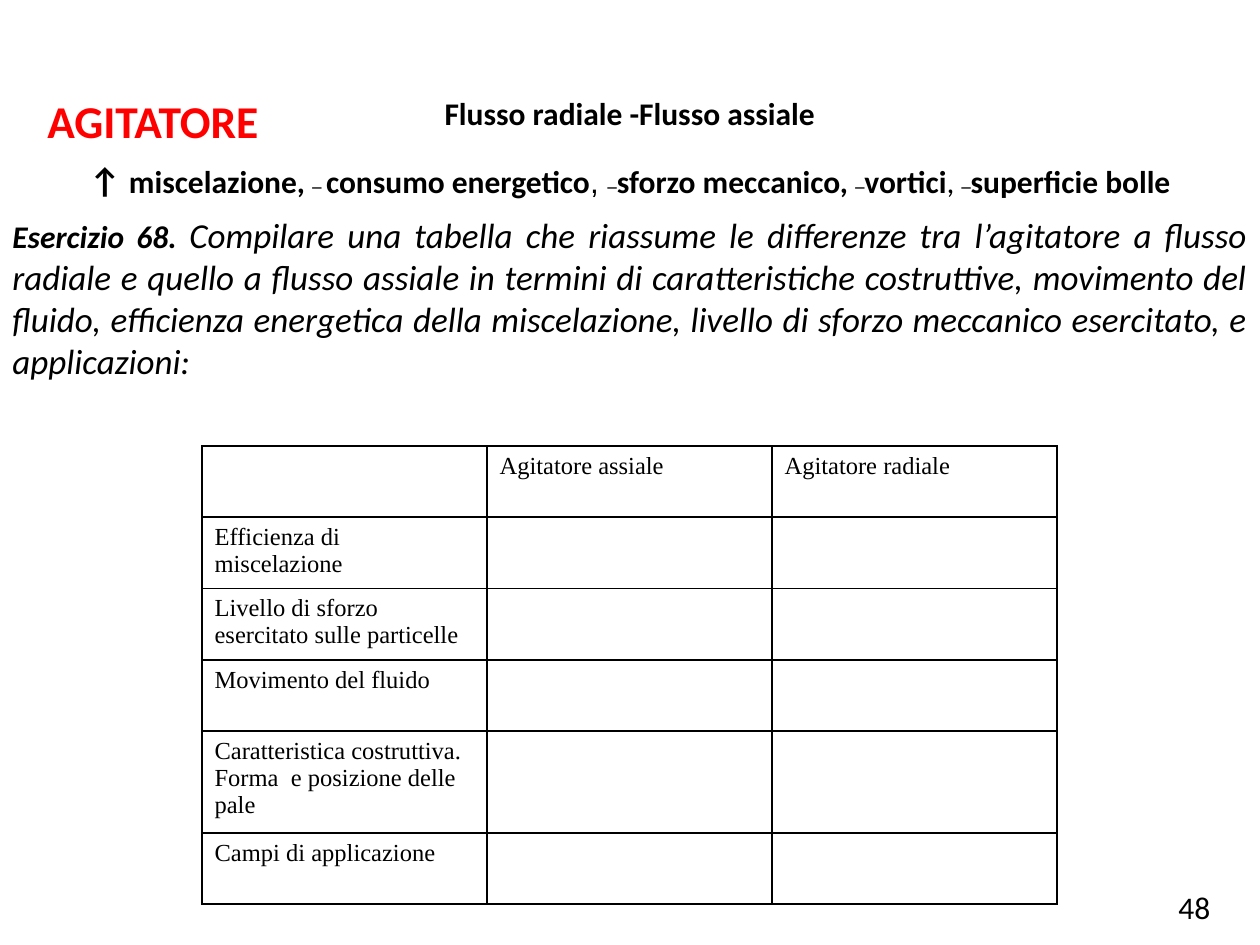
from lxml.etree import SubElement
from pptx import Presentation
from pptx.dml.color import RGBColor
from pptx.enum.text import MSO_ANCHOR, PP_ALIGN
from pptx.oxml.ns import qn
from pptx.util import Pt

EMU_PER_PX = 914400 / 126
BLACK = RGBColor(0x00, 0x00, 0x00)
RED = RGBColor(0xFF, 0x00, 0x00)
WHITE = RGBColor(0xFF, 0xFF, 0xFF)
SERIF = "Times New Roman"

BAR = ("¯", dict(font=SERIF, bold=True, baseline=-25))
BAR_SPACED = ("¯ ", BAR[1])
BOLD = dict(bold=True)
EFFECTS = [
    ("↑ ", dict(size=20, bold=True)),
    ("miscelazione, ", BOLD), BAR_SPACED,
    ("consumo energetico", BOLD), (", ", dict(font="Arial")), BAR,
    ("sforzo meccanico, ", BOLD), BAR,
    ("vortici", BOLD), (", ", {}), BAR,
    ("superficie bolle", BOLD),
]
EXERCISE = [
    ("Esercizio 68. ", dict(bold=True, italic=True)),
    ("Compilare una tabella che riassume le differenze tra l’agitatore a flusso "
     "radiale e quello a flusso assiale in termini di caratteristiche costruttive, "
     "movimento del fluido, efficienza energetica della miscelazione, livello di "
     "sforzo meccanico esercitato, e applicazioni:", dict(size=20, italic=True)),
]
COLUMN_HEADS = ["", "Agitatore assiale", "Agitatore radiale"]
CRITERIA = [
    "Efficienza di miscelazione",
    "Livello di sforzo esercitato sulle particelle",
    "Movimento del fluido",
    "Caratteristica costruttiva. Forma  e posizione delle pale",
    "Campi di applicazione",
]
ROW_HEIGHTS = [71, 71, 71, 71, 102, 71]


def px(length):
    return round(length * EMU_PER_PX)


def write(paragraph, text, size=18, font="Calibri", color=BLACK,
          bold=False, italic=False, baseline=0):
    run = paragraph.add_run()
    run.text = text
    run.font.size = Pt(size)
    run.font.name = font
    run.font.color.rgb = color
    run.font.bold = bold
    run.font.italic = italic
    if baseline:
        run.font._element.set("baseline", str(baseline * 1000))


def add_frame(slide, box, anchor=MSO_ANCHOR.TOP):
    frame = slide.shapes.add_textbox(*map(px, box)).text_frame
    frame.word_wrap = True
    frame.vertical_anchor = anchor
    return frame


def add_label(slide, box, text, align=PP_ALIGN.LEFT, anchor=MSO_ANCHOR.TOP, **style):
    paragraph = add_frame(slide, box, anchor).paragraphs[0]
    paragraph.alignment = align
    write(paragraph, text, **style)


def add_body(slide, box):
    frame = add_frame(slide, box)
    effects = frame.paragraphs[0]
    effects.alignment = PP_ALIGN.CENTER
    exercise = frame.add_paragraph()
    exercise.alignment = PP_ALIGN.JUSTIFY
    exercise.space_before = Pt(5)
    for paragraph, parts in ((effects, EFFECTS), (exercise, EXERCISE)):
        for text, style in parts:
            write(paragraph, text, **style)


def add_borders(cell):
    properties = cell._tc.get_or_add_tcPr()
    for side in ("a:lnL", "a:lnR", "a:lnT", "a:lnB"):
        line = SubElement(properties, qn(side), w=str(Pt(1)))
        fill = SubElement(line, qn("a:solidFill"))
        SubElement(fill, qn("a:srgbClr"), val=str(BLACK))


def add_comparison(slide, box):
    rows = [COLUMN_HEADS] + [[criterion, "", ""] for criterion in CRITERIA]
    table = slide.shapes.add_table(len(rows), len(COLUMN_HEADS), *map(px, box)).table
    for column in table.columns:
        column.width = px(box[2] / len(COLUMN_HEADS))
    for r, (texts, height) in enumerate(zip(rows, ROW_HEIGHTS)):
        table.rows[r].height = px(height)
        for c, text in enumerate(texts):
            cell = table.cell(r, c)
            add_borders(cell)
            cell.fill.solid()
            cell.fill.fore_color.rgb = WHITE
            if text:
                write(cell.text_frame.paragraphs[0], text, size=14, font=SERIF)


def main():
    deck = Presentation()
    deck.slide_width, deck.slide_height = px(1260), px(945)
    slide = deck.slides.add_slide(deck.slide_layouts[6])
    add_label(slide, (35, 87, 304, 67), "AGITATORE", size=26, color=RED, bold=True)
    add_label(slide, (1166, 882, 67, 63), "48")
    add_label(slide, (0, 87, 1260, 51), "Flusso radiale -Flusso assiale",
              align=PP_ALIGN.CENTER, anchor=MSO_ANCHOR.MIDDLE, bold=True)
    add_body(slide, (0, 152, 1260, 234))
    add_comparison(slide, (202, 446, 855, sum(ROW_HEIGHTS)))
    deck.save("out.pptx")


if __name__ == "__main__":
    main()
